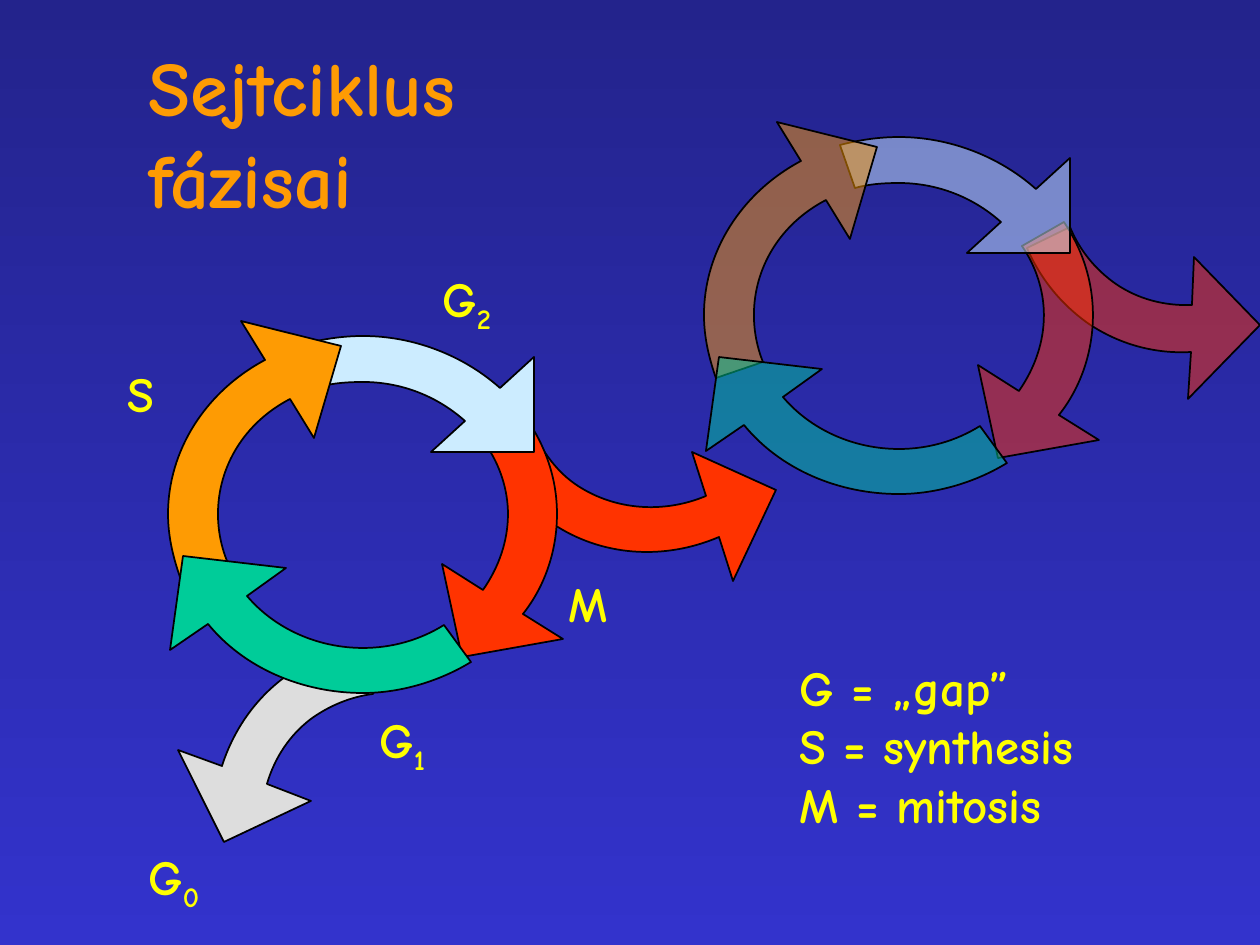
from math import cos, radians, sin

from lxml.etree import SubElement
from pptx import Presentation
from pptx.dml.color import RGBColor
from pptx.enum.text import MSO_ANCHOR
from pptx.oxml.ns import qn
from pptx.util import Pt

PX = 914400 // 126
FONT = "Comic Neue"
NIGHT = RGBColor(0x23, 0x23, 0x8C)
BLUE = RGBColor(0x33, 0x33, 0xCC)
BLACK = RGBColor(0, 0, 0)
YELLOW = RGBColor(0xFF, 0xFF, 0)
ORANGE = RGBColor(0xFE, 0x9B, 0x03)
RED = RGBColor(0xFF, 0x33, 0)
ICE = RGBColor(0xCC, 0xEC, 0xFF)
GREEN = RGBColor(0, 0xCC, 0x99)
GREY = RGBColor(0xDD, 0xDD, 0xDD)

# Each arrow: inner edge (start, then two Bézier curves), outer edge, head.
MITOSIS = (
    [(483, 590), (499, 567), (508, 541), (508, 514), (508, 490), (500, 465), (486, 445)],
    [(528, 421), (547, 449), (557, 481), (557, 514), (557, 549), (546, 585), (523, 614)],
    [(563, 639), (462, 657), (442, 564)])
GAP_2 = (
    [(465, 421), (437, 396), (401, 382), (363, 382), (348, 382), (333, 383), (319, 387)],
    [(304, 344), (323, 339), (343, 336), (363, 336), (413, 336), (463, 355), (500, 388)],
    [(534, 357), (534, 452), (431, 452)])
SYNTHESIS = (
    [(290, 399), (244, 423), (218, 467), (218, 514), (218, 530), (221, 546), (227, 561)],
    [(180, 577), (173, 557), (168, 536), (168, 514), (168, 451), (205, 392), (265, 360)],
    [(241, 321), (341, 346), (314, 438)])
GAP_1 = (
    [(247, 596), (275, 629), (318, 648), (363, 648), (392, 648), (420, 640), (444, 625)],
    [(471, 662), (440, 681), (401, 693), (363, 693), (302, 693), (244, 668), (208, 624)],
    [(170, 650), (183, 556), (286, 568)])
GAP_0 = (
    [(267, 784), (275, 757), (290, 735), (311, 719), (329, 706), (350, 697), (373, 694)],
    [(364, 648), (334, 650), (305, 662), (281, 680), (253, 702), (233, 732), (222, 766)],
    [(178, 750), (224, 842), (311, 801)])
FIRST_EXIT = (
    [(706, 496), (663, 514), (615, 510), (578, 486), (558, 473), (542, 452), (532, 428)],
    [(491, 449), (505, 479), (527, 505), (553, 524), (601, 556), (663, 561), (719, 537)],
    [(733, 581), (776, 490), (692, 452)])
SECOND_EXIT = (
    [(1192, 305), (1164, 306), (1138, 299), (1116, 284), (1096, 270), (1080, 251), (1070, 227)],
    [(1027, 248), (1041, 280), (1062, 305), (1089, 324), (1119, 344), (1154, 354), (1191, 352)],
    [(1188, 399), (1260, 325), (1194, 257)])
RING = [(MITOSIS, RED), (GAP_2, ICE), (SYNTHESIS, ORANGE), (GAP_1, GREEN)]

# Every arrow lies in a frame as large as a whole ring.
FRAME_WIDTH, FRAME_HEIGHT = 388, 357
RING_FRAME = (168, 336)
SECOND_RING_OFFSET = (536, -199)
EXIT_ROTATION = 303.7
GAP_0_ROTATION = 52.7

LABELS = [
    ("S", "", 115, 357, 63),
    ("G", "2", 430, 262, 79),
    ("G", "1", 367, 703, 79),
    ("M", "", 556, 567, 69),
    ("G", "0", 136, 840, 79),
]


def unrotate(point, frame, rotation):
    """Turn a slide point back about the frame's centre, giving EMU."""
    center_x = frame[0] + FRAME_WIDTH / 2
    center_y = frame[1] + FRAME_HEIGHT / 2
    dx, dy = point[0] - center_x, point[1] - center_y
    cosine, sine = cos(radians(rotation)), sin(radians(rotation))
    return (round((center_x + dx * cosine + dy * sine) * PX),
            round((center_y - dx * sine + dy * cosine) * PX))


def bend_edges(path):
    """Turn the straight steps along both edges into Bézier curves."""
    lines = path.findall(qn("a:lnTo"))
    # Line 6 joins the inner edge to the outer edge and stays straight.
    for first in (0, 3, 7, 10):
        curve = path.makeelement(qn("a:cubicBezTo"))
        lines[first].addprevious(curve)
        for line in lines[first:first + 3]:
            curve.append(line[0])
            path.remove(line)


def fit_to_frame(shape, path, frame):
    """Give the shape the ring-sized frame without moving its outline."""
    left, top = (length * PX for length in frame)
    for point in path.iter(qn("a:pt")):
        point.set("x", str(int(point.get("x")) + shape.left - left))
        point.set("y", str(int(point.get("y")) + shape.top - top))
    shape.left, shape.top = left, top
    shape.width, shape.height = FRAME_WIDTH * PX, FRAME_HEIGHT * PX
    path.set("w", str(shape.width))
    path.set("h", str(shape.height))


def add_arrow(slide, arrow, color, frame=RING_FRAME, rotation=0, offset=(0, 0), alpha=100):
    inner, outer, head = arrow
    start, *rest = [unrotate(point, frame, rotation) for point in inner + outer + head]
    builder = slide.shapes.build_freeform(*start)
    builder.add_line_segments(rest, close=True)
    shape = builder.convert_to_shape()
    path = next(shape._element.iter(qn("a:path")))
    bend_edges(path)
    fit_to_frame(shape, path, frame)
    shape.left += offset[0] * PX
    shape.top += offset[1] * PX
    shape.rotation = rotation
    shape.shadow.inherit = False
    shape.fill.solid()
    shape.fill.fore_color.rgb = color
    shape.line.color.rgb = BLACK
    shape.line.width = Pt(1)
    if alpha < 100:
        fill_color = shape._element.spPr.find(qn("a:solidFill"))[0]
        SubElement(fill_color, qn("a:alpha")).set("val", str(alpha * 1000))


def add_text(slide, lines, box, size=28, color=YELLOW, wrap=False, anchor=MSO_ANCHOR.TOP):
    shape = slide.shapes.add_textbox(*(length * PX for length in box))
    frame = shape.text_frame
    frame.word_wrap = wrap
    frame.vertical_anchor = anchor
    frame.text = "\n".join(lines)
    for paragraph in frame.paragraphs:
        paragraph.font.name = FONT
        paragraph.font.size = Pt(size)
        paragraph.font.bold = True
        paragraph.font.color.rgb = color
    return frame


def add_label(slide, letter, subscript, left, top, width):
    frame = add_text(slide, [letter], (left, top, width, 72))
    if subscript:
        run = frame.paragraphs[0].add_run()
        run.text = subscript
        run.font._element.set("baseline", "-25000")


def set_background(slide):
    fill = slide.background.fill
    fill.gradient()
    fill.gradient_angle = 270
    for stop, color in zip(fill.gradient_stops, (NIGHT, BLUE)):
        stop.color.rgb = color


def main():
    presentation = Presentation()
    presentation.slide_width = 1260 * PX
    presentation.slide_height = 945 * PX
    slide = presentation.slides.add_slide(presentation.slide_layouts[6])
    set_background(slide)

    add_text(slide, ["Sejtciklus fázisai"], (136, 53, 473, 157), size=44,
             color=ORANGE, wrap=True, anchor=MSO_ANCHOR.MIDDLE)

    add_arrow(slide, SECOND_EXIT, RED, (1003, -15), EXIT_ROTATION, alpha=50)
    for arrow, color in RING:
        add_arrow(slide, arrow, color, offset=SECOND_RING_OFFSET, alpha=50)

    add_arrow(slide, GAP_0, GREY, (204, 656), GAP_0_ROTATION)
    add_arrow(slide, FIRST_EXIT, RED, (467, 184), EXIT_ROTATION)
    for arrow, color in RING:
        add_arrow(slide, arrow, color)

    for label in LABELS:
        add_label(slide, *label)
    add_text(slide, ["G = „gap”", "S = synthesis", "M = mitosis"], (787, 651, 349, 189))

    presentation.save("out.pptx")


if __name__ == "__main__":
    main()
